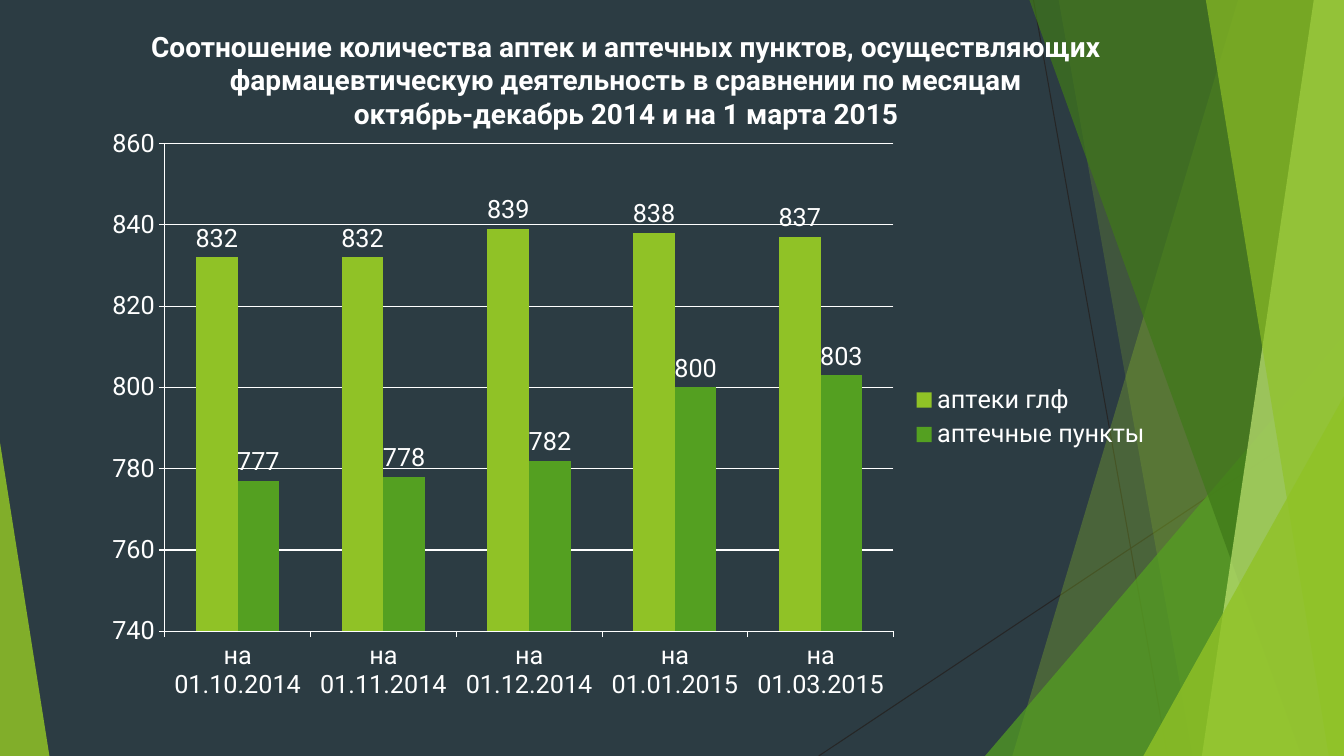
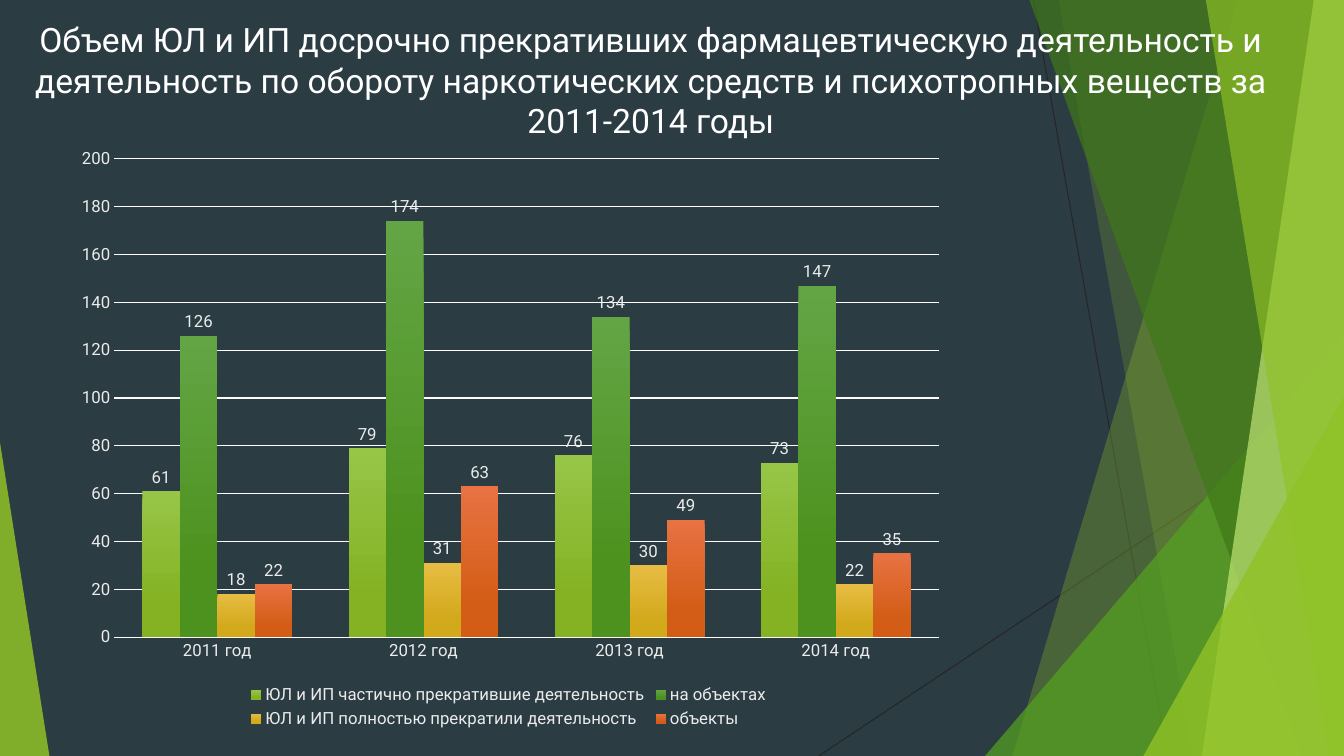
from lxml import etree
from pptx import Presentation
from pptx import util as u
from pptx.chart.data import CategoryChartData
from pptx.dml.color import RGBColor
from pptx.enum import chart as ch
from pptx.enum import shapes, text
from pptx.oxml.ns import qn

WIDE, HIGH = 13.33, 7.5
THEME = dict(font="Roboto", back="2C3C43", white="FFFFFF", pale="EBEBEB",
             grid="FCFCFC", dark="262626", lime="90C226", green="54A021",
             deep="3F7819", light="C0E474", line=0.75)

# Decor, back to front
RAYS = [(10.25, 0, 11.58, HIGH), (WIDE, 4.03, 8.12, HIGH)]
DECOR = [  # bands: top x, bottom x; peaks: left, top, width, apex
    ("band", (12.28, 10.04), "lime", 30),
    ("band", (10.5, 11.83), "lime", 20),
    ("peak", (9.77, 3.33, 3.56, 1), "green", 72),
    ("band", (10.21, 12.91), "deep", 70),
    ("band", (13.03, 11.92), "light", 70),
    ("band", (11.96, 13.18), "lime", 65),
    ("peak", (11.34, 3.93, 1.99, 1), "lime", 80),
    ("peak", (0, 4.39, 0.49, 0), "lime", 85),
]

SLIDES = [
    dict(
        title="Соотношение количества аптек и аптечных пунктов, осуществляющих "
              "фармацевтическую деятельность в сравнении по месяцам\n"
              "октябрь-декабрь 2014 и на 1 марта 2015",
        head=dict(box=(0.12, 0.24, 12.18, 1.11), size=20, bold=True),
        box=(0.89, 1.19, 10.63, 5.9), plot=(0.07, 0.04, 0.68, 0.82),
        scale=(740, 860, 20), size=18, color="white", grid="white",
        tick=ch.XL_TICK_MARK.OUTSIDE, edge=True,
        legend=ch.XL_LEGEND_POSITION.RIGHT,
        cats=[f"на 01.{m}" for m in
              ("10.2014", "11.2014", "12.2014", "01.2015", "03.2015")],
        series=[
            ("аптеки глф", (832, 832, 839, 838, 837), ("90C226",)),
            ("аптечные пункты", (777, 778, 782, 800, 803), ("54A021",)),
        ]),
    dict(
        title="Объем ЮЛ и ИП досрочно прекративших фармацевтическую "
              "деятельность и деятельность по обороту наркотических средств "
              "и психотропных веществ за 2011-2014 годы",
        head=dict(box=(0.24, 0.14, 12.43, 1.31), size=24, bold=False),
        box=(0.6, 1.34, 8.89, 5.93), plot=(0.06, 0.04, 0.92, 0.8),
        scale=(0, 200, 20), size=12, color="pale", grid="grid",
        tick=ch.XL_TICK_MARK.NONE, edge=False,
        legend=ch.XL_LEGEND_POSITION.BOTTOM,
        cats=[f"{y} год" for y in range(2011, 2015)],
        series=[
            ("ЮЛ и ИП частично прекратившие деятельность",
             (61, 79, 76, 73), ("97C547", "84B223")),
            ("на объектах", (126, 174, 134, 147), ("63A545", "4D921E")),
            ("ЮЛ и ИП полностью прекратили деятельность",
             (18, 31, 30, 22), ("E7BC43", "D2A91B")),
            ("объекты", (22, 63, 49, 35), ("E87242", "D35D16")),
        ]),
]


def inch(*vals):
    return [u.Inches(v) for v in vals]


def hue(name):
    return RGBColor.from_string(THEME.get(name, name))


def style(font, size, color, bold=False):
    font.name, font.size, font.bold = THEME["font"], u.Pt(size), bold
    font.color.rgb = hue(color)


def stroke(line, color):
    line.color.rgb = hue(color)
    line.width = u.Pt(THEME["line"])


def tint(shape, color, alpha):
    """Fill a shape with a see-through colour, alpha in percent."""
    shape.shadow.inherit = False
    shape.line.fill.background()
    shape.fill.solid()
    shape.fill.fore_color.rgb = hue(color)
    node = shape.element.spPr.find(".//" + qn("a:srgbClr"))
    etree.SubElement(node, qn("a:alpha")).set("val", str(alpha * 1000))


def decorate(slide, master):
    """Draw the shared decor as a group and move it to the master."""
    group = slide.shapes.add_group_shape()
    for ray in RAYS:
        line = group.shapes.add_connector(
            shapes.MSO_CONNECTOR.STRAIGHT, *inch(*ray))
        stroke(line.line, "dark")
        etree.SubElement(line.element.spPr, qn("a:effectLst"))
    for kind, geo, color, alpha in DECOR:
        if kind == "band":
            top, low = geo
            pen = group.shapes.build_freeform(*inch(top, 0))
            pen.add_line_segments(
                [inch(*p) for p in ((WIDE, 0), (WIDE, HIGH), (low, HIGH))])
            shape = pen.convert_to_shape()
        else:
            left, top, wide, apex = geo
            shape = group.shapes.add_shape(
                shapes.MSO_SHAPE.ISOSCELES_TRIANGLE,
                *inch(left, top, wide, HIGH - top))
            shape.adjustments[0] = apex
        tint(shape, color, alpha)
    master.shapes.element.insert(2, group.element)


def put_title(slide, words, box, size, bold):
    title = slide.shapes.title
    title.left, title.top, title.width, title.height = inch(*box)
    frame = title.text_frame
    frame.text = words
    frame.word_wrap = True
    frame.vertical_anchor = text.MSO_ANCHOR.TOP
    frame.auto_size = text.MSO_AUTO_SIZE.SHAPE_TO_FIT_TEXT
    for para in frame.paragraphs:
        para.alignment = text.PP_ALIGN.CENTER
        for run in para.runs:
            style(run.font, size, "white", bold)


def place_plot(chart, shares):
    """Fix the inner plot area as shares of the chart's size."""
    area = chart.element.find(".//" + qn("c:plotArea"))
    for old in area.findall(qn("c:layout")):
        area.remove(old)
    layout = etree.Element(qn("c:layout"))
    area.insert(0, layout)
    manual = etree.SubElement(layout, qn("c:manualLayout"))
    rules = [("layoutTarget", "inner"), ("xMode", "edge"), ("yMode", "edge")]
    for tag, val in rules + list(zip("xywh", shares)):
        etree.SubElement(manual, qn("c:" + tag)).set("val", str(val))


def paint(fill, colors):
    if len(colors) == 1:
        fill.solid()
        fill.fore_color.rgb = hue(colors[0])
        return
    fill.gradient()
    fill.gradient_angle = 270
    for stop, color, pos in zip(fill.gradient_stops, colors, (0, 0.78)):
        stop.color.rgb, stop.position = hue(color), pos


def put_chart(slide, page):
    data = CategoryChartData()
    data.categories = page["cats"]
    for name, vals, _ in page["series"]:
        data.add_series(name, vals)
    chart = slide.shapes.add_chart(
        ch.XL_CHART_TYPE.COLUMN_CLUSTERED, *inch(*page["box"]), data).chart
    chart.has_title = False
    style(chart.font, page["size"], page["color"])
    place_plot(chart, page["plot"])

    chart.has_legend = True
    chart.legend.position = page["legend"]
    chart.legend.include_in_layout = False
    style(chart.legend.font, page["size"], page["color"])

    cat, val = chart.category_axis, chart.value_axis
    for axis in (cat, val):
        axis.major_tick_mark = page["tick"]
        axis.minor_tick_mark = ch.XL_TICK_MARK.NONE
        style(axis.tick_labels.font, page["size"], page["color"])
        stroke(axis.format.line, page["grid"])
    if not page["edge"]:
        val.format.line.fill.background()
    val.minimum_scale, val.maximum_scale, val.major_unit = page["scale"]
    val.has_major_gridlines = True
    stroke(val.major_gridlines.format.line, page["grid"])

    plot = chart.plots[0]
    plot.gap_width, plot.overlap, plot.vary_by_categories = 150, 0, False
    plot.has_data_labels = True
    labels = plot.data_labels
    labels.show_value = True
    labels.position = ch.XL_LABEL_POSITION.OUTSIDE_END
    style(labels.font, page["size"], page["color"])
    for bars, (_, _, colors) in zip(plot.series, page["series"]):
        bars.invert_if_negative = False
        paint(bars.format.fill, colors)


def main():
    deck = Presentation()
    deck.slide_width, deck.slide_height = inch(WIDE, HIGH)
    master = deck.slide_master
    master.background.fill.solid()
    master.background.fill.fore_color.rgb = hue("back")
    layout = deck.slide_layouts.get_by_name("Title Only")
    for num, page in enumerate(SLIDES):
        slide = deck.slides.add_slide(layout)
        if num == 0:
            decorate(slide, master)
        put_chart(slide, page)
        put_title(slide, page["title"], **page["head"])
    deck.save("out.pptx")


if __name__ == "__main__":
    main()
